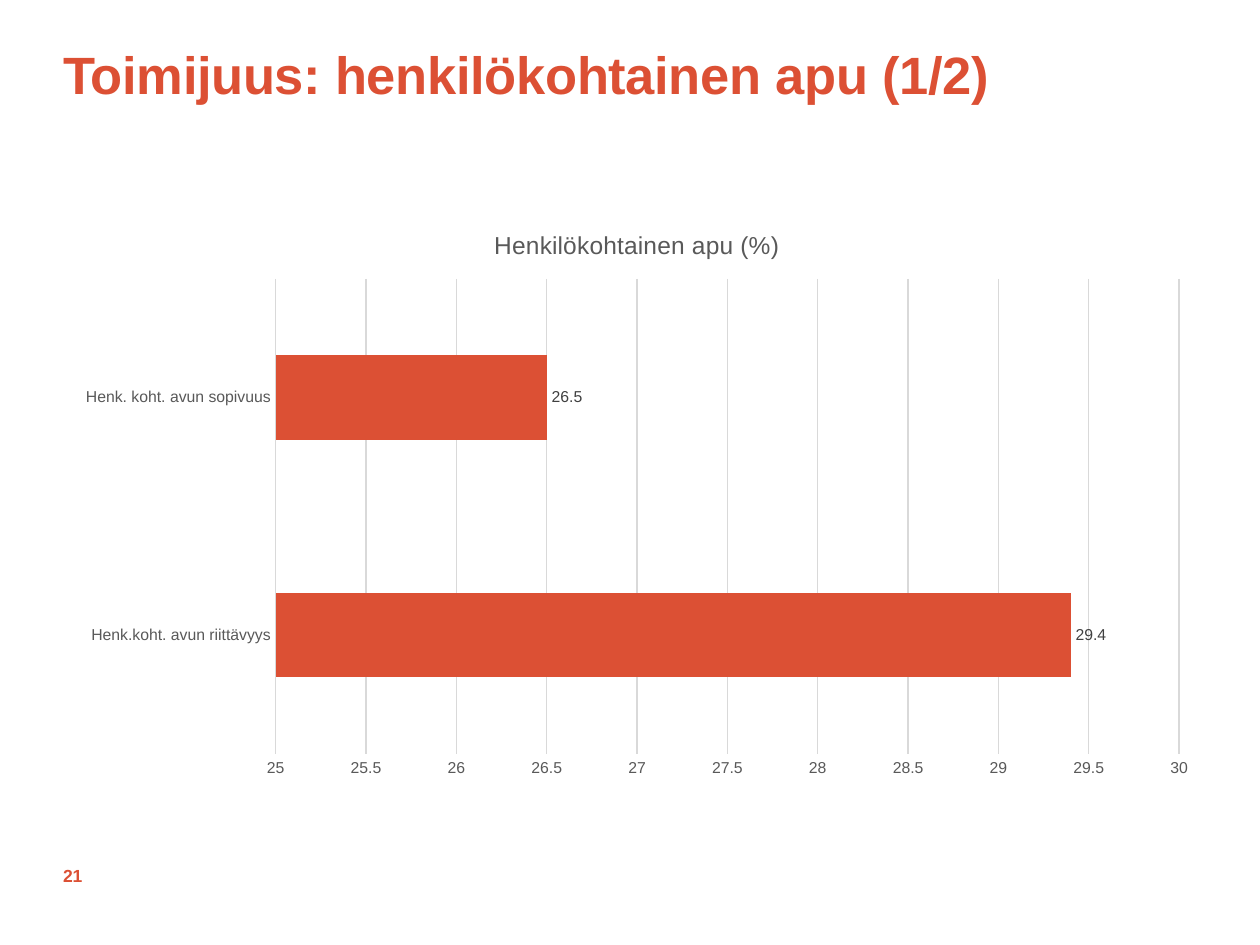
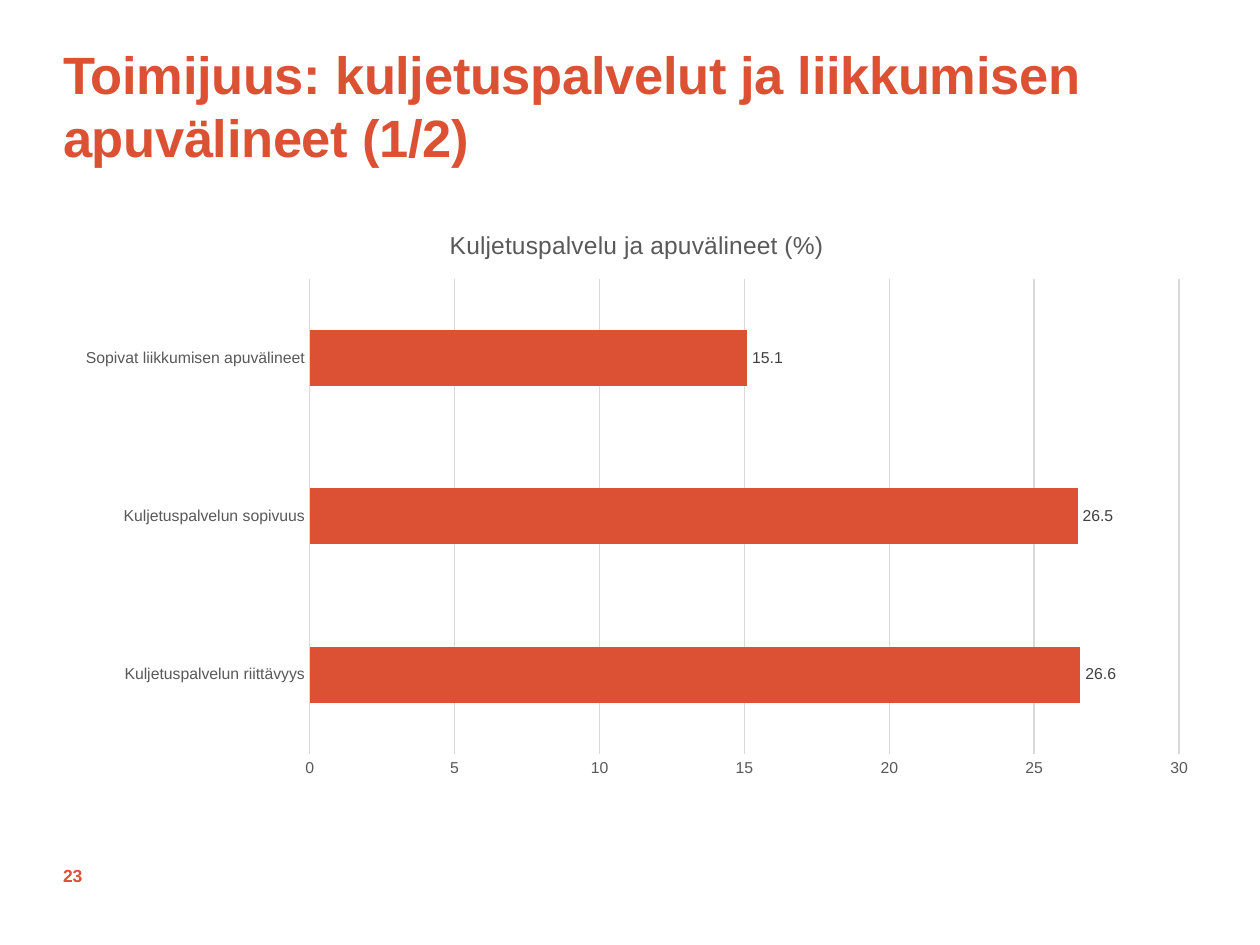
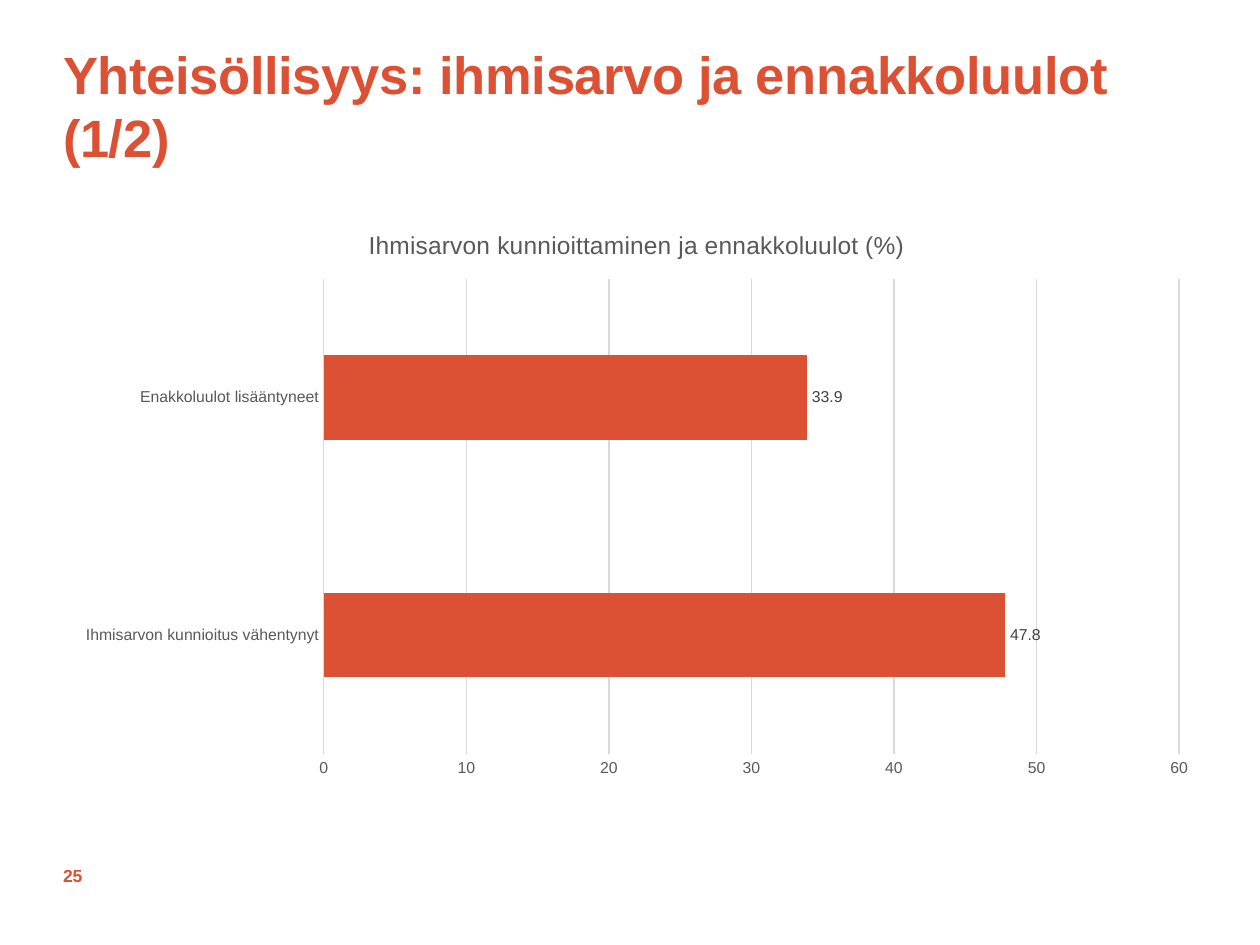
from pptx import Presentation
from pptx.chart.data import CategoryChartData as ChartData
from pptx.dml.color import RGBColor
from pptx.enum.chart import XL_CHART_TYPE as Kind, XL_LABEL_POSITION as Spot
from pptx.enum.chart import XL_TICK_MARK as Tick
from pptx.enum.text import MSO_ANCHOR as Anchor, MSO_AUTO_SIZE as Fit, PP_ALIGN as Align
from pptx.util import Inches, Pt

# Content: title, page number, chart title, axis (low, high, step), bars from the bottom up
PAGES = [
    ("Toimijuus: henkilökohtainen apu (1/2)", "21",
     "Henkilökohtainen apu (%)", (25, 30, 0.5),
     [("Henk.koht. avun riittävyys", 29.4),
      ("Henk. koht. avun sopivuus", 26.5)]),
    ("Toimijuus: kuljetuspalvelut ja liikkumisen apuvälineet (1/2)", "23",
     "Kuljetuspalvelu ja apuvälineet (%)", (0, 30, 5),
     [("Kuljetuspalvelun riittävyys", 26.6),
      ("Kuljetuspalvelun sopivuus", 26.5),
      ("Sopivat liikkumisen apuvälineet", 15.1)]),
    ("Yhteisöllisyys: ihmisarvo ja ennakkoluulot (1/2)", "25",
     "Ihmisarvon kunnioittaminen ja ennakkoluulot (%)", (0, 60, 10),
     [("Ihmisarvon kunnioitus vähentynyt", 47.8),
      ("Enakkoluulot lisääntyneet", 33.9)]),
]

# Shared style
FACE = "Arial"
BRAND, GREY, DARK, RULE = "DC5034", "595959", "404040", "D9D9D9"
HEAD_BOX = (0.5, 0.3, 9, 1.16)
PAGE_BOX = (0.5, 6.75, 0.71, 0.4)
CHART_BOX = (0.5, 1.64, 9.11, 4.62)


def rgb(code):
    return RGBColor.from_string(code)


def inch(box):
    return [Inches(n) for n in box]


def style(font, size, color, bold=False):
    font.name, font.size, font.bold = FACE, Pt(size), bold
    font.color.rgb = rgb(color)


def rule(line):
    line.color.rgb = rgb(RULE)
    line.width = Pt(0.75)


def write(shape, text, size, anchor, top=0):
    """Put one bold brand-coloured run in a box without side margins."""
    frame = shape.text_frame
    frame.word_wrap, frame.auto_size = True, Fit.NONE
    frame.vertical_anchor = anchor
    frame.margin_left = frame.margin_right = frame.margin_bottom = 0
    frame.margin_top = Inches(top)
    para = frame.paragraphs[0]
    para.alignment = Align.LEFT
    run = para.add_run()
    run.text = text
    style(run.font, size, BRAND, True)
    return para, run


def add_head(slide, text):
    head = slide.shapes.title
    head.left, head.top, head.width, head.height = inch(HEAD_BOX)
    para, run = write(head, text, 30, Anchor.TOP, 0.03)
    para.line_spacing = Pt(36)
    run.font._element.set("spc", "-20")


def add_bars(slide, name, scale, bars):
    data = ChartData()
    data.categories = [label for label, _ in bars]
    data.add_series("Series 1", [value for _, value in bars])
    chart = slide.shapes.add_chart(
        Kind.BAR_CLUSTERED, *inch(CHART_BOX), data).chart
    style(chart.font, 10, "000000")
    chart.has_legend = False

    # Chart title
    chart.has_title = True
    run = chart.chart_title.text_frame.paragraphs[0].add_run()
    run.text = name
    style(run.font, 14, GREY)
    chart.chart_title.include_in_layout = False

    # Axes
    cats, vals = chart.category_axis, chart.value_axis
    for axis in (cats, vals):
        axis.major_tick_mark = axis.minor_tick_mark = Tick.NONE
        style(axis.tick_labels.font, 9, GREY)
    cats.has_major_gridlines = False
    rule(cats.format.line)
    vals.format.line.fill.background()
    vals.minimum_scale, vals.maximum_scale, vals.major_unit = scale
    vals.has_major_gridlines = True
    rule(vals.major_gridlines.format.line)

    # Bars and their values
    plot = chart.plots[0]
    plot.gap_width, plot.vary_by_categories = 182, False
    row = plot.series[0]
    row.format.fill.solid()
    row.format.fill.fore_color.rgb = rgb(BRAND)
    tags = row.data_labels
    tags.show_value, tags.position = True, Spot.OUTSIDE_END
    style(tags.font, 9, DARK)


def main():
    deck = Presentation()
    deck.slide_width, deck.slide_height = Inches(10), Inches(7.5)
    for head, page, name, scale, bars in PAGES:
        slide = deck.slides.add_slide(deck.slide_layouts[5])
        add_head(slide, head)
        write(slide.shapes.add_textbox(*inch(PAGE_BOX)), page, 10, Anchor.MIDDLE)
        add_bars(slide, name, scale, bars)
    deck.save("out.pptx")


if __name__ == "__main__":
    main()
